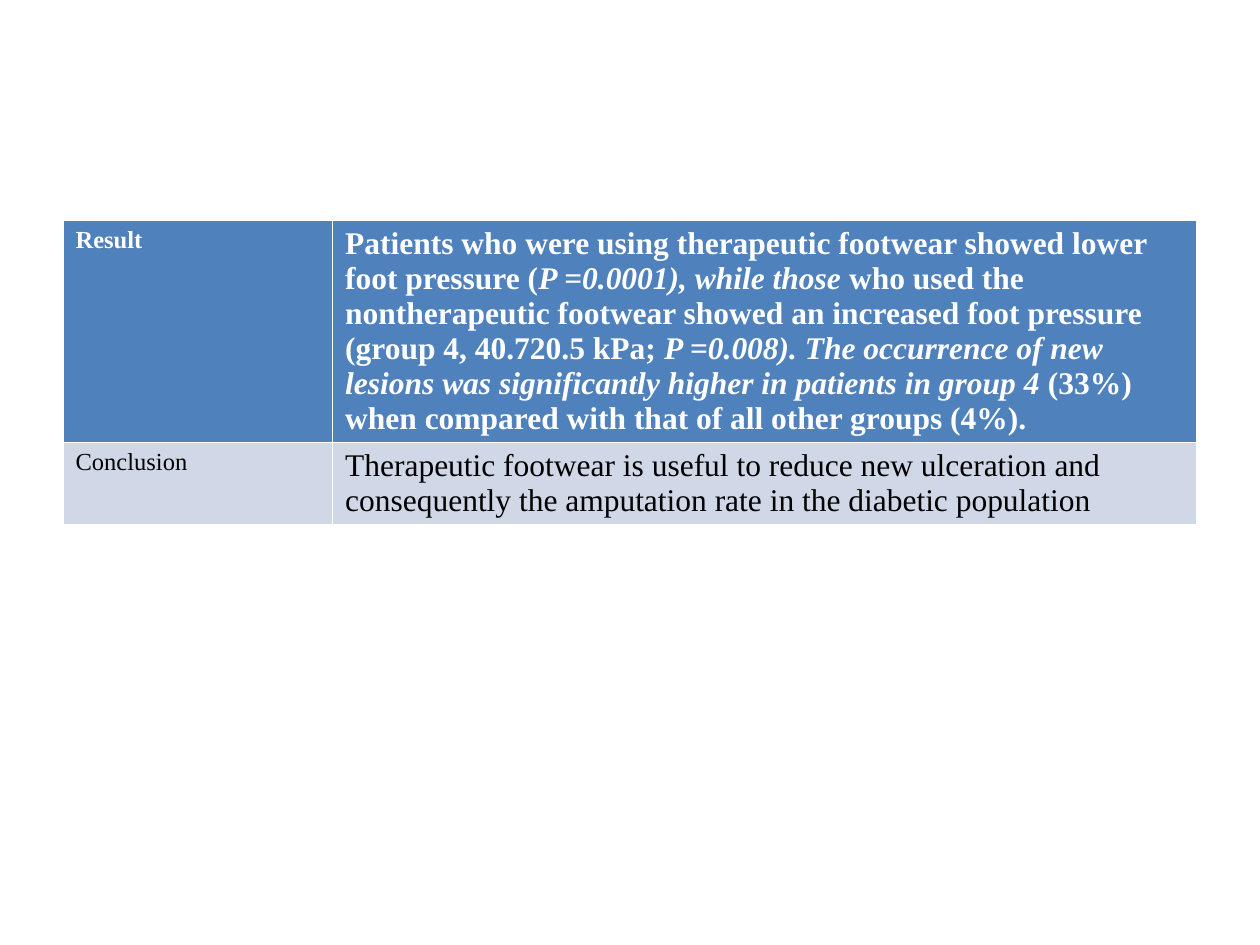
from dataclasses import dataclass

from pptx import Presentation
from pptx.dml.color import RGBColor
from pptx.table import _Cell
from pptx.util import Inches, Pt


@dataclass(frozen=True)
class Span:
    """A stretch of text with one slant."""

    text: str
    italic: bool = False


@dataclass(frozen=True)
class StudyRow:
    """A labelled row of the study summary."""

    label: str
    spans: tuple[Span, ...]
    fill: str
    color: str
    bold: bool


ROWS = (
    StudyRow(
        "Result",
        (
            Span("Patients who were using therapeutic footwear showed lower foot pressure ("),
            Span("P =0.0001), while those ", italic=True),
            Span(
                "who used the nontherapeutic footwear showed an increased "
                "foot pressure (group 4, 40.720.5 kPa; "
            ),
            Span(
                "P =0.008). The occurrence of new lesions was significantly "
                "higher in patients in group 4 ",
                italic=True,
            ),
            Span("(33%) when compared with that of all other groups (4%)."),
        ),
        fill="4F81BD",
        color="FFFFFF",
        bold=True,
    ),
    StudyRow(
        "Conclusion",
        (
            Span(
                "Therapeutic footwear is useful to reduce new ulceration and "
                "consequently the amputation rate in the diabetic population"
            ),
        ),
        fill="D0D8E8",
        color="000000",
        bold=False,
    ),
)
COLUMN_WIDTHS = (2.14, 6.86)
ROW_HEIGHT = 0.41
TABLE_HEIGHT = 2.6


def rgb(value: str) -> RGBColor:
    """Turn a hex string into a colour."""
    return RGBColor.from_string(value)


def fill_cell(cell: _Cell, spans: tuple[Span, ...], size: int, row: StudyRow) -> None:
    """Write the spans into a cell in the style of its row."""
    cell.fill.solid()
    cell.fill.fore_color.rgb = rgb(row.fill)
    para = cell.text_frame.paragraphs[0]
    for span in spans:
        run = para.add_run()
        run.text = span.text
        run.font.color.rgb = rgb(row.color)
        formats = {
            "name": "Times New Roman",
            "size": Pt(size),
            "bold": row.bold,
            "italic": span.italic,
        }
        for name, value in formats.items():
            setattr(run.font, name, value)


def main() -> None:
    """Build the deck with its study summary table."""
    deck = Presentation()
    deck.slide_width, deck.slide_height = Inches(10), Inches(7.5)
    page = deck.slides.add_slide(deck.slide_layouts[6])
    frame = page.shapes.add_table(
        len(ROWS), len(COLUMN_WIDTHS),
        Inches(0.5), Inches(1.75), Inches(sum(COLUMN_WIDTHS)), Inches(TABLE_HEIGHT),
    )
    table = frame.table
    for column, width in zip(table.columns, COLUMN_WIDTHS):
        column.width = Inches(width)
    for index, row in enumerate(ROWS):
        table.rows[index].height = Inches(ROW_HEIGHT)
        fill_cell(table.cell(index, 0), (Span(row.label),), 14, row)
        fill_cell(table.cell(index, 1), row.spans, 18, row)
    frame.height = Inches(TABLE_HEIGHT)
    deck.save("out.pptx")


if __name__ == "__main__":
    main()
